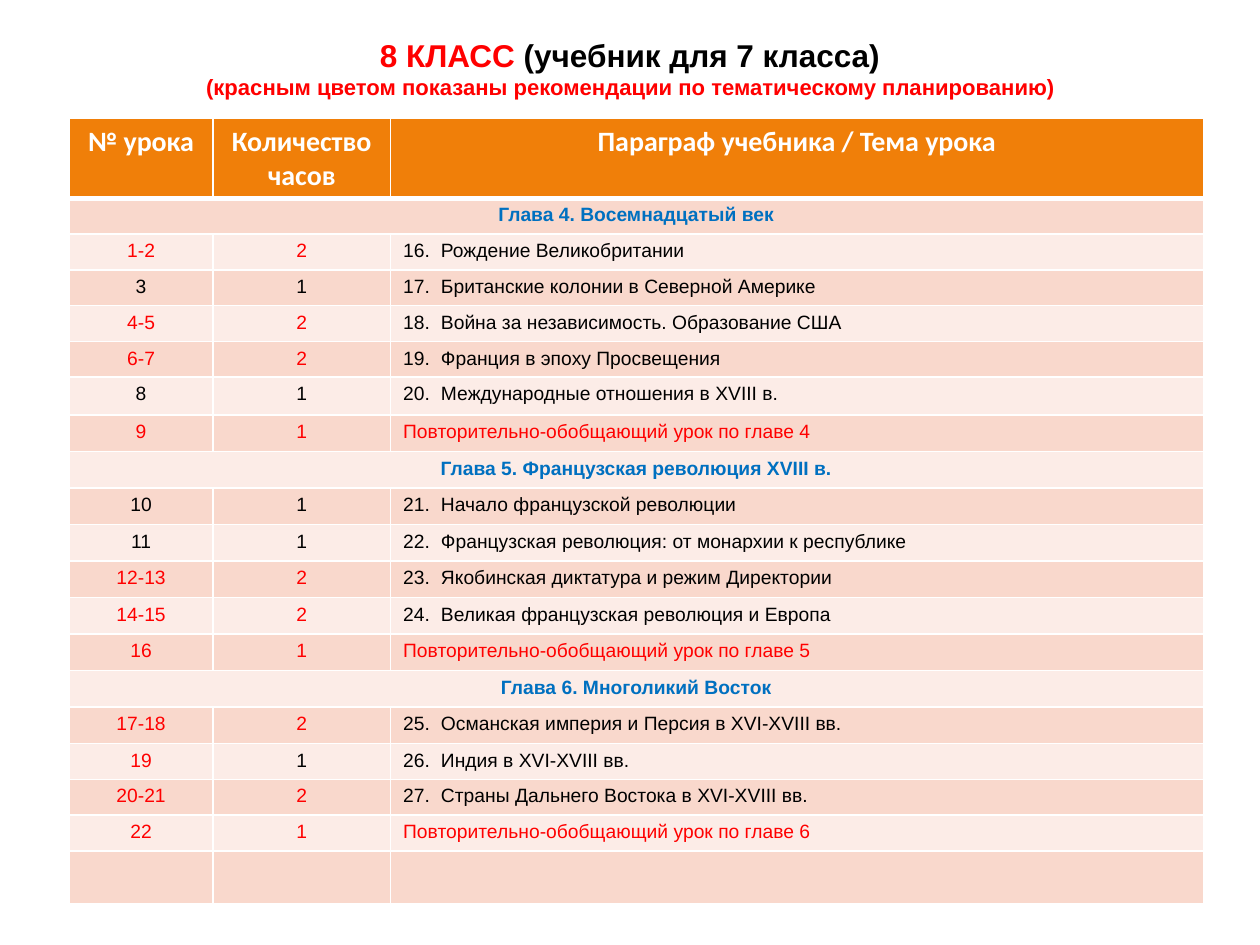
"""Build the grade 8 history lesson plan slide."""
import pptx
import pptx.dml.color
import pptx.enum.text
import pptx.oxml
import pptx.oxml.ns
import pptx.util
from lxml import etree

Inches, Pt = pptx.util.Inches, pptx.util.Pt
RGBColor = pptx.dml.color.RGBColor
ALIGN = pptx.enum.text.PP_ALIGN
qn = pptx.oxml.ns.qn

RED = RGBColor(0xFF, 0x00, 0x00)
BLACK = RGBColor(0x00, 0x00, 0x00)
WHITE = RGBColor(0xFF, 0xFF, 0xFF)
BLUE = RGBColor(0x00, 0x70, 0xC0)
ORANGE = RGBColor(0xF0, 0x7F, 0x09)
BANDS = (RGBColor(0xFC, 0xEC, 0xE7), RGBColor(0xF9, 0xD8, 0xCC))

HEADING = [
    ("8 КЛАСС ", 18, RED),
    ("(учебник для 7 класса)", 18, BLACK),
    ("(красным цветом показаны рекомендации по тематическому планированию)", 12.6, RED),
]
HEADERS = ("№ урока", "Количество часов", "Параграф учебника / Тема урока")

# Each lesson: number, hours, topic, how many leading cells are red.
CHAPTERS = [
    ("Глава 4. Восемнадцатый век", [
        ("1-2", "2", "16.\tРождение Великобритании", 2),
        ("3", "1", "17.\tБританские колонии в Северной Америке", 0),
        ("4-5", "2", "18.\tВойна за независимость. Образование США", 2),
        ("6-7", "2", "19.\tФранция в эпоху Просвещения", 2),
        ("8", "1", "20.\tМеждународные отношения в XVIII в.", 0),
        ("9", "1", "Повторительно-обобщающий урок по главе 4", 3),
    ]),
    ("Глава 5. Французская революция XVIII в.", [
        ("10", "1", "21.\tНачало французской революции", 0),
        ("11", "1", "22.\tФранцузская революция: от монархии к республике", 0),
        ("12-13", "2", "23.\tЯкобинская диктатура и режим Директории", 2),
        ("14-15", "2", "24.\tВеликая французская революция и Европа", 2),
        ("16", "1", "Повторительно-обобщающий урок по главе 5", 3),
    ]),
    ("Глава 6. Многоликий Восток", [
        ("17-18", "2", "25.\tОсманская империя и Персия в XVI-XVIII вв.", 2),
        ("19", "1", "26.\tИндия в XVI-XVIII вв.", 1),
        ("20-21", "2", "27.\tСтраны Дальнего Востока в XVI-XVIII вв.", 2),
        ("22", "1", "Повторительно-обобщающий урок по главе 6", 3),
    ]),
]
COLUMN_WIDTHS = (1.14, 1.41, 6.45)
ROW_HEIGHTS = [0.62] + [0.28] * 5 + [0.3] + [0.29] * 9 + [0.28] * 3 + [0.42]
TOPIC_TAB = 0.3


def style(font, size, color, bold, name="Arial"):
    font.name, font.size, font.bold = name, Pt(size), bold
    font.color.rgb = color


def write(cell, text, size, color, bold, name="Arial", align=ALIGN.CENTER):
    paragraph = cell.text_frame.paragraphs[0]
    paragraph.add_run().text = text
    paragraph.alignment = align
    if "\t" in text:
        properties = paragraph._p.get_or_add_pPr()
        stops = etree.SubElement(properties, qn("a:tabLst"))
        etree.SubElement(stops, qn("a:tab"), pos=str(Inches(TOPIC_TAB)), algn="l")
    style(paragraph.font, size, color, bold, name)


def add_borders(cell, top, bottom):
    properties = cell._tc.get_or_add_tcPr()
    for side, width in (("L", 1), ("R", 1), ("T", top), ("B", bottom)):
        line = etree.SubElement(properties, qn("a:ln" + side), w=str(Pt(width)))
        fill = etree.SubElement(line, qn("a:solidFill"))
        etree.SubElement(fill, qn("a:srgbClr"), val=str(WHITE))


def add_heading(slide):
    box = slide.shapes.add_textbox(Inches(0.5), Inches(0.3), Inches(9), Inches(0.48))
    frame = box.text_frame
    frame.word_wrap = True
    frame.vertical_anchor = pptx.enum.text.MSO_ANCHOR.MIDDLE
    paragraph = frame.paragraphs[0]
    paragraph.alignment = ALIGN.CENTER
    for index, (text, size, color) in enumerate(HEADING):
        if index == 2:
            paragraph.add_line_break()
        run = paragraph.add_run()
        run.text = text
        style(run.font, size, color, True)


def add_plan(slide):
    plan = slide.shapes.add_table(
        len(ROW_HEIGHTS), len(COLUMN_WIDTHS), Inches(0.55), Inches(0.94),
        Inches(sum(COLUMN_WIDTHS)), Inches(sum(ROW_HEIGHTS))).table
    for column, width in zip(plan.columns, COLUMN_WIDTHS):
        column.width = Inches(width)
    for index, (row, height) in enumerate(zip(plan.rows, ROW_HEIGHTS)):
        row.height = Inches(height)
        for cell in row.cells:
            add_borders(cell, 3 if index == 1 else 1, 3 if index == 0 else 1)
            cell.fill.solid()
            cell.fill.fore_color.rgb = BANDS[index % 2] if index else ORANGE

    for column, header in enumerate(HEADERS):
        write(plan.cell(0, column), header, 16, WHITE, True, "Calibri")
    row = 1
    for chapter, lessons in CHAPTERS:
        plan.cell(row, 0).merge(plan.cell(row, 2))
        write(plan.cell(row, 0), chapter, 11, BLUE, True)
        for row, (*lesson, red_cells) in enumerate(lessons, row + 1):
            for column, text in enumerate(lesson):
                write(plan.cell(row, column), text, 11,
                      RED if column < red_cells else BLACK, False,
                      align=ALIGN.LEFT if column == 2 else ALIGN.CENTER)
        row += 1


def main():
    deck = pptx.Presentation()
    deck.slide_width, deck.slide_height = Inches(10), Inches(7.5)
    slide = deck.slides.add_slide(deck.slide_layouts[6])
    add_heading(slide)
    add_plan(slide)
    deck.save("out.pptx")


if __name__ == "__main__":
    main()
